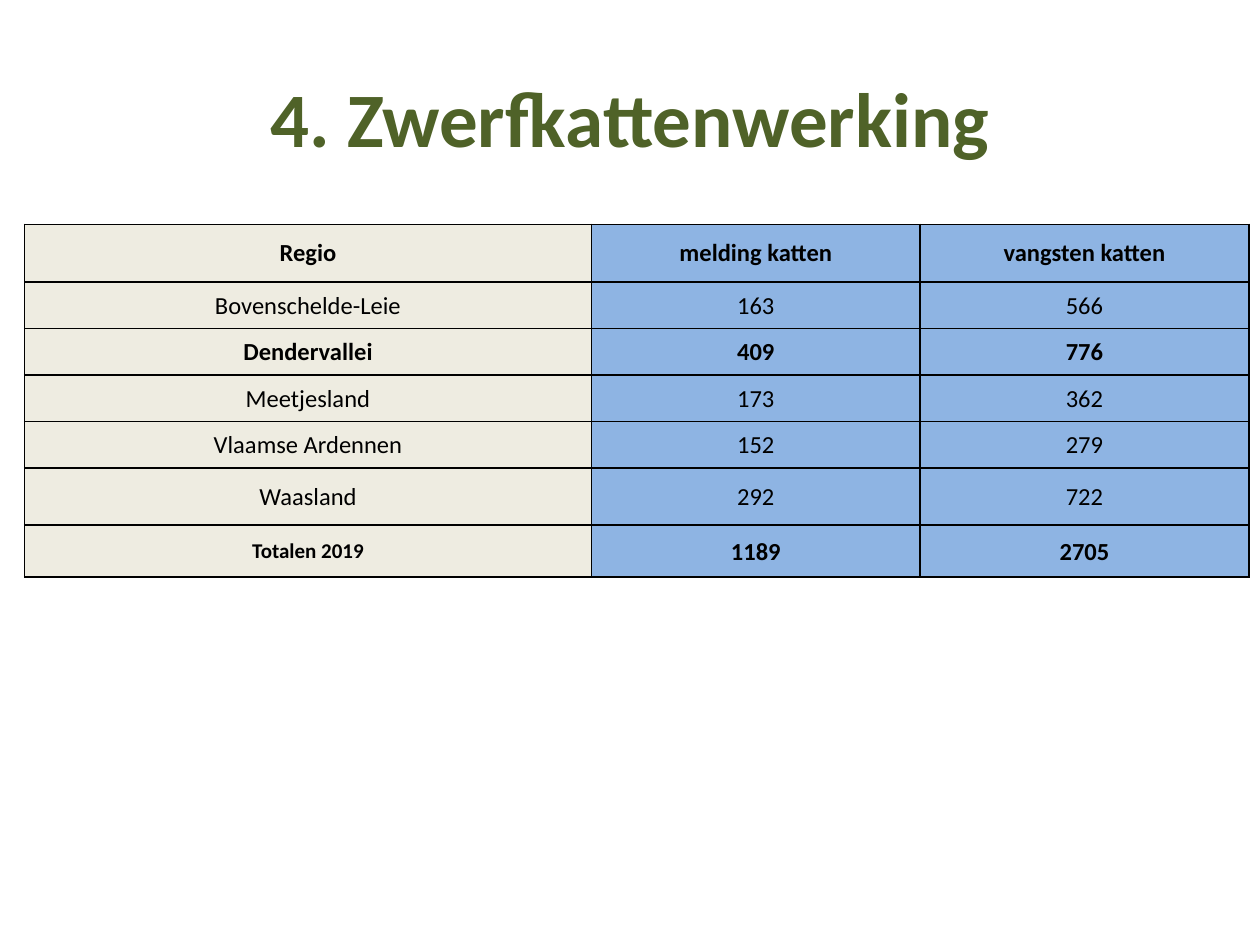
from pptx import Presentation
from pptx.dml.color import RGBColor
from pptx.enum import text
from pptx.oxml import parse_xml
from pptx.oxml import ns
from pptx.util import Pt

GREEN = RGBColor(0x4F, 0x62, 0x28)
BLACK = RGBColor(0, 0, 0)
CREAM = RGBColor(0xEE, 0xEC, 0xE1)
BLUE = RGBColor(0x8E, 0xB4, 0xE3)

ROWS = [
    ("Regio", "melding katten", "vangsten katten"),
    ("Bovenschelde-Leie", "163", "566"),
    ("Dendervallei", "409", "776"),
    ("Meetjesland", "173", "362"),
    ("Vlaamse Ardennen", "152", "279"),
    ("Waasland", "292", "722"),
    ("Totalen 2019", "1189", "2705"),
]
BOLD_ROWS = {"Regio", "Dendervallei", "Totalen 2019"}
ROW_HEIGHTS = [32.9, 26.6, 26.6, 26.6, 26.6, 32.6, 29.8]
COLUMN_WIDTHS = [324, 187.8, 187.8]


class SlideBuilder:
    """Holds the font and the current slide, and adds each kind of element."""

    def __init__(self, slide, font="Calibri"):
        self.slide = slide
        self.font = font

    def set_text(self, tf, words, size, color, bold):
        tf.text = words
        p = tf.paragraphs[0]
        p.alignment = text.PP_ALIGN.CENTER
        for r in p.runs:
            r.font.name = self.font
            r.font.size = Pt(size)
            r.font.bold = bold
            r.font.color.rgb = color

    def title(self, words, left, top, width, height):
        s = self.slide.shapes.title
        s.left, s.top, s.width, s.height = map(Pt, (left, top, width, height))
        s.text_frame.vertical_anchor = text.MSO_ANCHOR.MIDDLE
        self.set_text(s.text_frame, words, 44, GREEN, True)

    def border(self, cell, width=1):
        tc_pr = cell._tc.get_or_add_tcPr()
        for i, side in enumerate(("lnL", "lnR", "lnT", "lnB")):
            tc_pr.insert(i, parse_xml(
                f'<a:{side} {ns.nsdecls("a")} w="{Pt(width)}"><a:solidFill>'
                f'<a:srgbClr val="{BLACK}"/></a:solidFill></a:{side}>'))

    def cell(self, cell, words, size, fill, bold, side_margin, top_margin):
        cell.margin_left = cell.margin_right = Pt(side_margin)
        cell.margin_top, cell.margin_bottom = Pt(top_margin), Pt(0)
        cell.vertical_anchor = text.MSO_ANCHOR.MIDDLE
        cell.fill.solid()
        cell.fill.fore_color.rgb = fill
        self.set_text(cell.text_frame, words, size, BLACK, bold)
        self.border(cell)

    def table(self, rows, left, top, widths, heights):
        table = self.slide.shapes.add_table(
            len(rows), len(widths), Pt(left), Pt(top),
            Pt(sum(widths)), Pt(sum(heights))).table
        for column, width in zip(table.columns, widths):
            column.width = Pt(width)
        for row, height in zip(table.rows, heights):
            row.height = Pt(height)
        for i, row in enumerate(rows):
            for j, words in enumerate(row):
                is_total = words == "Totalen 2019"
                margins = (2, 0) if i == 0 or is_total else (0.75, 0.75)
                self.cell(table.cell(i, j), words, 12 if is_total else 14,
                          BLUE if j else CREAM, row[0] in BOLD_ROWS, *margins)


def main():
    prs = Presentation()
    prs.slide_width, prs.slide_height = Pt(720), Pt(540)
    builder = SlideBuilder(prs.slides.add_slide(prs.slide_layouts[5]))
    builder.title("4. Zwerfkattenwerking", 36, 21.6, 648, 90)
    builder.table(ROWS, 14, 128.2, COLUMN_WIDTHS, ROW_HEIGHTS)
    prs.save("out.pptx")


if __name__ == "__main__":
    main()
